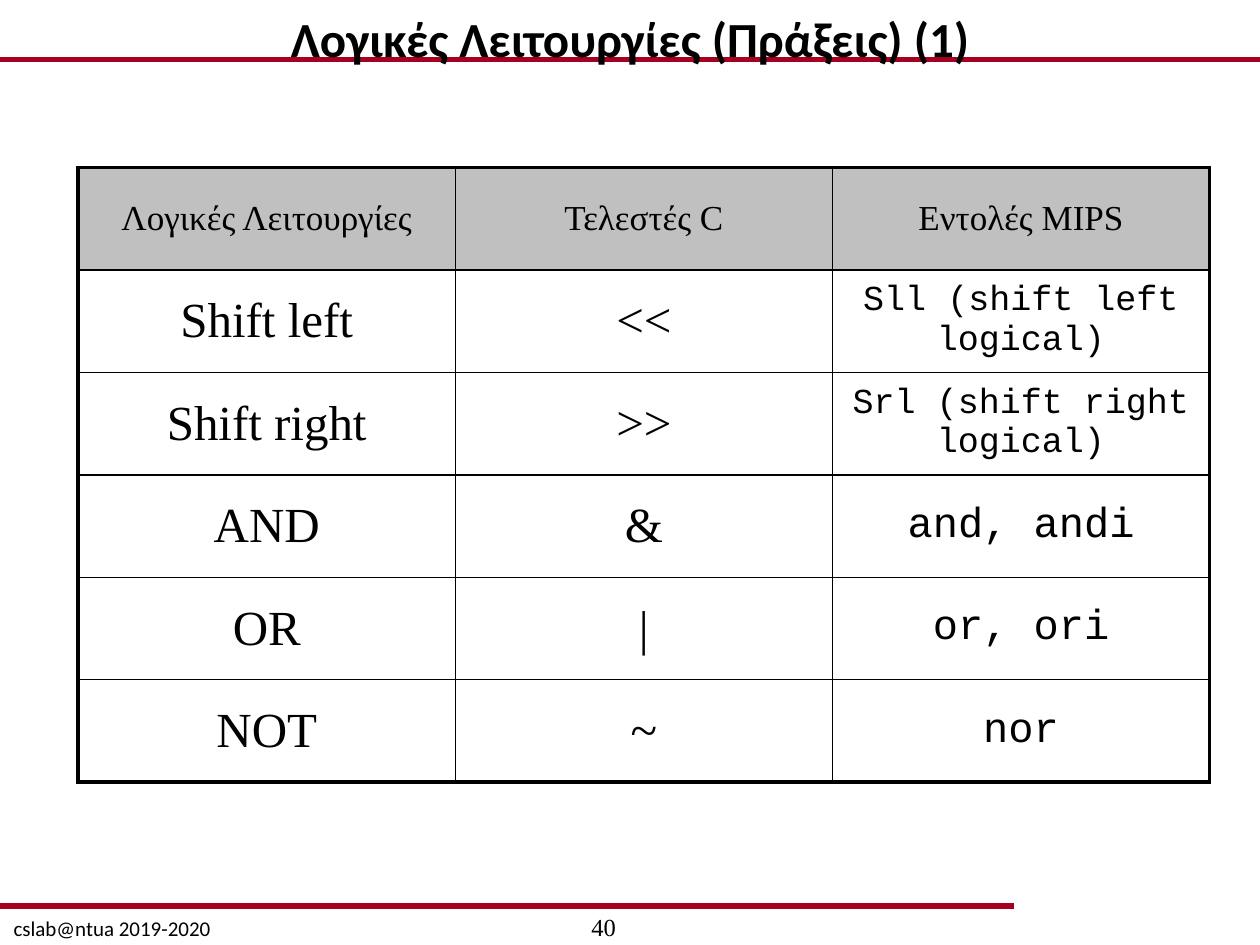
from dataclasses import dataclass

from lxml import etree
from pptx import Presentation
from pptx.dml.color import RGBColor
from pptx.enum.shapes import MSO_CONNECTOR
from pptx.enum.text import MSO_ANCHOR, PP_ALIGN
from pptx.oxml.ns import qn
from pptx.util import Inches, Pt


@dataclass(frozen=True)
class Theme:
    ink: str = "000000"
    rule: str = "A50021"
    header: str = "C0C0C0"
    paper: str = "FFFFFF"
    sans: str = "Calibri"
    serif: str = "Times New Roman"
    mono: str = "Courier New"
    title: int = 28
    head: int = 20
    body: int = 28
    code: int = 24
    code_long: int = 20
    number: int = 14
    footer: int = 12
    rule_width: float = 3
    outer: float = 2.25
    inner: float = 1


THEME = Theme()
WIDTH, HEIGHT = 10, 7.5

HEADINGS = ("Λογικές Λειτουργίες", "Τελεστές C", "Εντολές MIPS")
OPERATIONS = (
    ("Shift left", "<<", "Sll (shift left logical)"),
    ("Shift right", ">>", "Srl (shift right logical)"),
    ("AND", "&", "and, andi"),
    ("OR", "|", "or, ori"),
    ("NOT", "~", "nor"),
)


def write(tf, text, font, size, bold=False):
    p = tf.paragraphs[0]
    p.alignment = PP_ALIGN.CENTER
    r = p.add_run()
    r.text = text
    r.font.name = font
    r.font.size = Pt(size)
    r.font.bold = bold
    r.font.color.rgb = RGBColor.from_string(THEME.ink)


def add_label(s, box, text, font, size, bold=False, inset=0.05):
    sp = s.shapes.add_textbox(*(Inches(v) for v in box))
    tf = sp.text_frame
    tf.word_wrap = True
    tf.margin_left = tf.margin_right = 0
    tf.margin_top = Inches(inset)
    write(tf, text, font, size, bold)


def add_rule(s, left, top, width):
    cx = s.shapes.add_connector(
        MSO_CONNECTOR.STRAIGHT, Inches(left), Inches(top),
        Inches(left + width), Inches(top))
    cx.line.color.rgb = RGBColor.from_string(THEME.rule)
    cx.line.width = Pt(THEME.rule_width)
    etree.SubElement(cx._element.spPr, qn("a:effectLst"))


def set_borders(cell, widths):
    """Put the left, right, top and bottom lines ahead of the cell's fill."""
    tcPr = cell._tc.get_or_add_tcPr()
    for i, (side, width) in enumerate(zip("LRTB", widths)):
        ln = etree.Element(qn(f"a:ln{side}"), w=str(Pt(width)))
        fill = etree.SubElement(ln, qn("a:solidFill"))
        etree.SubElement(fill, qn("a:srgbClr"), val=THEME.ink)
        tcPr.insert(i, ln)


def cell_style(row, col, text):
    if row == 0:
        return THEME.serif, THEME.head
    if col < 2:
        return THEME.serif, THEME.body
    return THEME.mono, THEME.code_long if "(" in text else THEME.code


def build_title(s, box):
    left, top, width, height = box
    add_rule(s, left, top + height, width)
    add_label(s, box, "Λογικές Λειτουργίες (Πράξεις) (1)",
              THEME.sans, THEME.title, bold=True, inset=0.07)


def build_table(s, box):
    rows = (HEADINGS,) + OPERATIONS
    last_row, last_col = len(rows) - 1, len(HEADINGS) - 1
    table = s.shapes.add_table(
        len(rows), len(HEADINGS), *(Inches(v) for v in box)).table
    for row, texts in enumerate(rows):
        for col, text in enumerate(texts):
            cell = table.cell(row, col)
            cell.vertical_anchor = MSO_ANCHOR.MIDDLE
            cell.fill.solid()
            cell.fill.fore_color.rgb = RGBColor.from_string(
                THEME.paper if row else THEME.header)
            write(cell.text_frame, text, *cell_style(row, col, text))
            edges = (col == 0, col == last_col, row == 0, row == last_row)
            set_borders(cell, [THEME.outer if e else THEME.inner for e in edges])


def build_footer(s, box):
    left, top, width, height = box
    add_rule(s, left, top, 0.805 * width)
    add_label(s, (left - 0.02, top + 0.03, 0.182 * width, 0.2),
              "cslab@ntua 2019-2020", THEME.sans, THEME.footer)
    add_label(s, (left + 0.375 * width, top, 0.208 * width, 0.26),
              "40", THEME.serif, THEME.number)


def main():
    prs = Presentation()
    prs.slide_width, prs.slide_height = Inches(WIDTH), Inches(HEIGHT)
    s = prs.slides.add_slide(prs.slide_layouts[6])
    build_footer(s, (0, 7.19, WIDTH, HEIGHT - 7.19))
    build_table(s, (0.62, 1.33, 8.98, 4.88))
    build_title(s, (0, 0, WIDTH, 0.47))
    prs.save("out.pptx")


if __name__ == "__main__":
    main()
